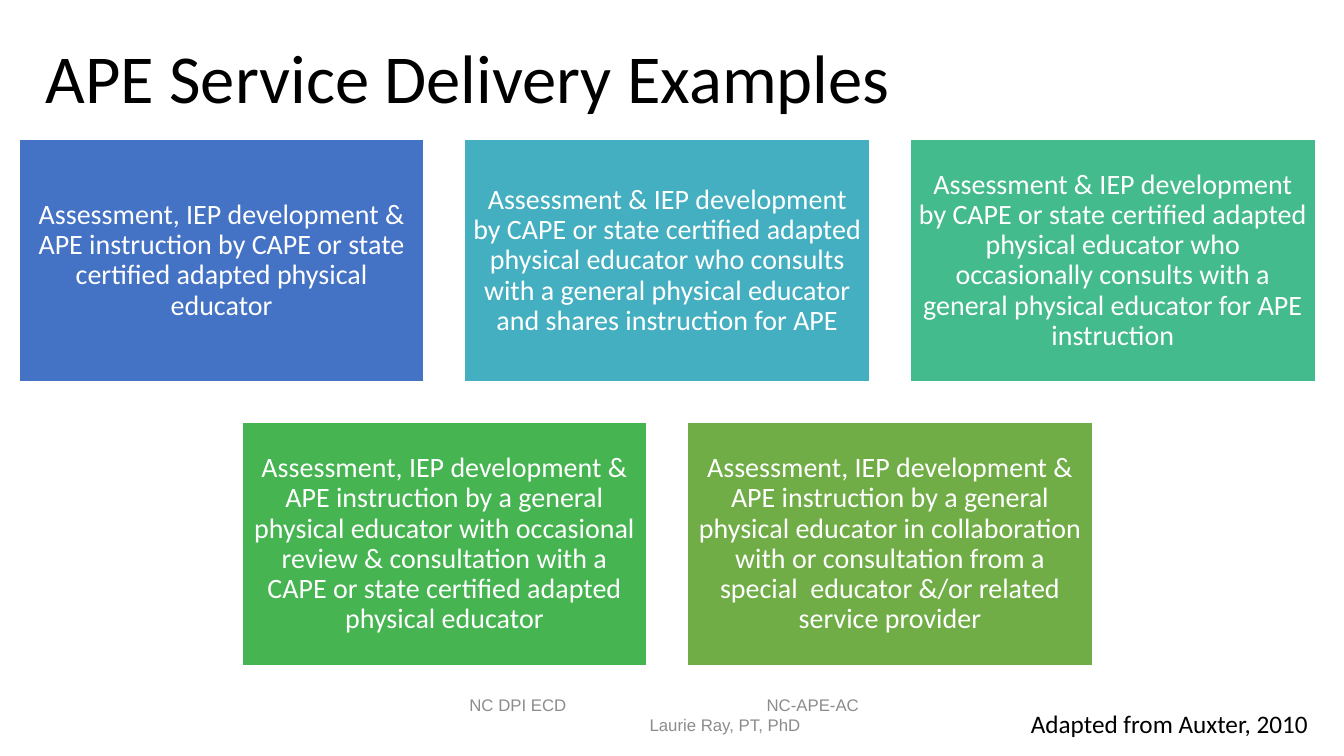
from dataclasses import dataclass

from lxml.etree import SubElement
from pptx import Presentation
from pptx.dml.color import RGBColor
from pptx.enum.shapes import MSO_SHAPE
from pptx.enum.text import MSO_ANCHOR, MSO_AUTO_SIZE, PP_ALIGN
from pptx.oxml.ns import qn
from pptx.slide import Slide
from pptx.text.text import TextFrame, _Paragraph
from pptx.util import Cm, Pt

COLOURS = {
    "text": "000000", "white": "FFFFFF", "footer": "8C8C8C",
    "blue": "4472C4", "teal": "43AFC0", "mint": "43BB8D",
    "green": "45B451", "olive": "70AD47",
}

# Grid of boxes, in centimetres
BOX_WIDTH, BOX_HEIGHT, GAP = 10.21, 6.12, 1.02
GRID_LEFT, GRID_TOP = 0.48, 3.51
COLUMNS = 3


@dataclass
class Example:
    colour: str
    text: str


ROWS = [
    [
        Example("blue", "Assessment, IEP development & APE instruction by CAPE or state "
                "certified adapted physical educator"),
        Example("teal", "Assessment & IEP development by CAPE or state certified adapted "
                "physical educator who consults with a general physical educator and "
                "shares instruction for APE"),
        Example("mint", "Assessment & IEP development by CAPE or state certified adapted "
                "physical educator who occasionally consults with a general physical "
                "educator for APE instruction"),
    ],
    [
        Example("green", "Assessment, IEP development & APE instruction by a general "
                "physical educator with occasional review & consultation with a CAPE or "
                "state certified adapted physical educator"),
        Example("olive", "Assessment, IEP development & APE instruction by a general "
                "physical educator in collaboration with or consultation from a "
                "special  educator &/or related service provider"),
    ],
]


def colour(name: str) -> RGBColor:
    return RGBColor.from_string(COLOURS[name])


def apply(target: object, formats: dict) -> None:
    for name, value in formats.items():
        setattr(target, name, value)


def write(paragraph: _Paragraph, text: str, size: float, colour_name: str,
          font: str = "Calibri", **formats: object) -> None:
    paragraph.text = text
    apply(paragraph, formats)
    apply(paragraph.font, {"name": font, "size": Pt(size)})
    paragraph.font.color.rgb = colour(colour_name)


def add_title(slide: Slide) -> None:
    title = slide.shapes.title
    apply(title, {"left": Cm(0.89), "top": Cm(0.13), "width": Cm(29.59), "height": Cm(3.84)})
    apply(title.text_frame, {"auto_size": MSO_AUTO_SIZE.NONE,
                             "vertical_anchor": MSO_ANCHOR.MIDDLE})
    write(title.text_frame.paragraphs[0], "APE Service Delivery Examples", 49, "text",
          alignment=PP_ALIGN.LEFT, line_spacing=0.9)


def add_example(slide: Slide, example: Example, left: float, top: float) -> None:
    shape = slide.shapes.add_shape(MSO_SHAPE.RECTANGLE, Cm(left), Cm(top),
                                   Cm(BOX_WIDTH), Cm(BOX_HEIGHT))
    shape.shadow.inherit = False
    shape.fill.solid()
    shape.fill.fore_color.rgb = colour(example.colour)
    shape.line.color.rgb = colour("white")
    shape.line.width = Pt(1)
    frame = shape.text_frame
    apply(frame, {"word_wrap": True, "vertical_anchor": MSO_ANCHOR.MIDDLE})
    apply(frame, {f"margin_{side}": Cm(0.2) for side in ("left", "top", "right", "bottom")})
    write(frame.paragraphs[0], example.text, 20, "white",
          alignment=PP_ALIGN.CENTER, line_spacing=0.9)


def add_text_frame(slide: Slide, left: float, top: float, width: float, height: float,
                   **formats: object) -> TextFrame:
    frame = slide.shapes.add_textbox(Cm(left), Cm(top), Cm(width), Cm(height)).text_frame
    apply(frame, formats)
    return frame


def add_footer(slide: Slide) -> None:
    frame = add_text_frame(slide, 11.58, 17.35, 10.72, 1.32,
                           word_wrap=True, vertical_anchor=MSO_ANCHOR.MIDDLE)
    organisations, author = frame.paragraphs[0], frame.add_paragraph()
    write(organisations, "NC DPI ECD\tNC-APE-AC", 12, "footer", "Arial")
    write(author, "Laurie Ray, PT, PhD", 12, "footer", "Arial")
    # Tab stop for the second organisation, indent for the author
    properties = organisations._p.get_or_add_pPr()
    tabs = SubElement(properties, qn("a:tabLst"))
    SubElement(tabs, qn("a:tab"), pos=str(Cm(7.49)), algn="l")
    properties.remove(tabs)
    properties.insert_element_before(tabs, "a:defRPr", "a:extLst")
    author._p.get_or_add_pPr().set("marL", str(Cm(4.54)))


def main() -> None:
    presentation = Presentation()
    apply(presentation, {"slide_width": Cm(33.87), "slide_height": Cm(19.05)})
    slide = presentation.slides.add_slide(presentation.slide_layouts[5])
    add_title(slide)

    # Each row is centred under the full one
    for row, examples in enumerate(ROWS):
        indent = (COLUMNS - len(examples)) * (BOX_WIDTH + GAP) / 2
        for column, example in enumerate(examples):
            add_example(slide, example,
                        GRID_LEFT + indent + column * (BOX_WIDTH + GAP),
                        GRID_TOP + row * (BOX_HEIGHT + GAP))

    # Source credit and footer
    credit = add_text_frame(slide, 25.73, 17.73, 7.72, 1.02, word_wrap=False,
                            auto_size=MSO_AUTO_SIZE.SHAPE_TO_FIT_TEXT)
    write(credit.paragraphs[0], "Adapted from Auxter, 2010", 18, "text")
    add_footer(slide)
    presentation.save("out.pptx")


if __name__ == "__main__":
    main()
